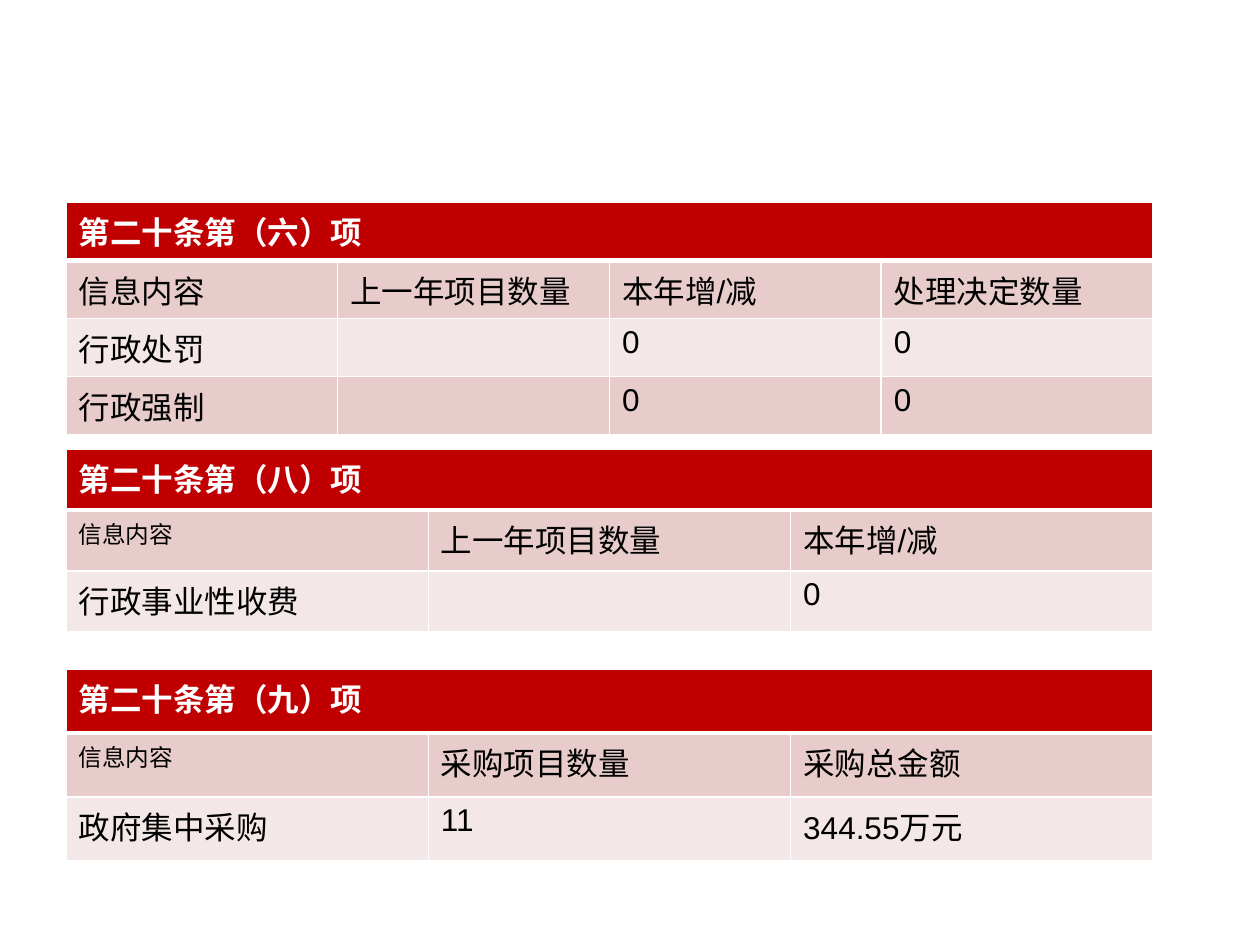
from dataclasses import dataclass

from lxml import etree
from pptx import Presentation
from pptx.dml.color import RGBColor
from pptx.oxml.ns import qn
from pptx.util import Emu, Pt

PX_PER_INCH = 126
LEFT, WIDTH = 66, 1087

FONT = "Arial"
BODY_SIZE, SMALL_SIZE = 18, 13.5
THIN, THICK = 1, 3

WHITE = RGBColor(0xFF, 0xFF, 0xFF)
BLACK = RGBColor(0x00, 0x00, 0x00)
RED = RGBColor(0xC0, 0x00, 0x00)
BANDS = (RGBColor(0xE8, 0xCC, 0xCC), RGBColor(0xF4, 0xE7, 0xE7))


@dataclass(frozen=True)
class Section:
    title: str
    top: int
    row_height: int
    rows: tuple[tuple[str, ...], ...]
    label_size: float = BODY_SIZE  # size of the first column heading


SECTIONS = (
    Section("第二十条第（六）项", 202, 53, (
        ("信息内容", "上一年项目数量", "本年增/减", "处理决定数量"),
        ("行政处罚", "", "0", "0"),
        ("行政强制", "", "0", "0"),
    )),
    Section("第二十条第（八）项", 449, 61, (
        ("信息内容", "上一年项目数量", "本年增/减"),
        ("行政事业性收费", "", "0"),
    ), SMALL_SIZE),
    Section("第二十条第（九）项", 669, 64, (
        ("信息内容", "采购项目数量", "采购总金额"),
        ("政府集中采购", "11", "344.55万元"),
    ), SMALL_SIZE),
)


def px(n: int) -> Emu:
    return Emu(round(n * 914400 / PX_PER_INCH))


def set_borders(cell, top: int, bottom: int) -> None:
    """Draw white cell borders; widths are in points."""
    tc_pr = cell._tc.get_or_add_tcPr()
    widths = {"a:lnL": THIN, "a:lnR": THIN, "a:lnT": top, "a:lnB": bottom}
    for i, (tag, width) in enumerate(widths.items()):
        ln = etree.Element(qn(tag), w=str(Pt(width)))
        fill = etree.SubElement(ln, qn("a:solidFill"))
        etree.SubElement(fill, qn("a:srgbClr"), val=str(WHITE))
        tc_pr.insert(i, ln)


def style_cell(cell, fill: RGBColor, top: int = THIN, bottom: int = THIN) -> None:
    cell.fill.solid()
    cell.fill.fore_color.rgb = fill
    set_borders(cell, top, bottom)


def write(cell, text: str, color: RGBColor, size: float, bold: bool) -> None:
    p = cell.text_frame.paragraphs[0]
    if not text:
        p.font.size = Pt(size)
        return
    r = p.add_run()
    r.text = text
    r.font.name = FONT
    r.font.size = Pt(size)
    r.font.bold = bold
    r.font.color.rgb = color


def add_section(slide, section: Section) -> None:
    n_rows, n_cols = len(section.rows) + 1, len(section.rows[0])
    table = slide.shapes.add_table(
        n_rows, n_cols, px(LEFT), px(section.top),
        px(WIDTH), px(section.row_height * n_rows)).table

    for c in range(n_cols):
        style_cell(table.cell(0, c), RED, bottom=THICK)
    header = table.cell(0, 0)
    header.merge(table.cell(0, n_cols - 1))
    write(header, section.title, WHITE, BODY_SIZE, True)

    for r, values in enumerate(section.rows):
        for c, value in enumerate(values):
            cell = table.cell(r + 1, c)
            style_cell(cell, BANDS[r % 2], top=THIN if r else THICK)
            size = section.label_size if r == c == 0 else BODY_SIZE
            write(cell, value, BLACK, size, False)


def main() -> None:
    prs = Presentation()
    prs.slide_width, prs.slide_height = px(1260), px(945)
    slide = prs.slides.add_slide(prs.slide_layouts[6])
    for section in SECTIONS:
        add_section(slide, section)
    prs.save("out.pptx")


if __name__ == "__main__":
    main()
